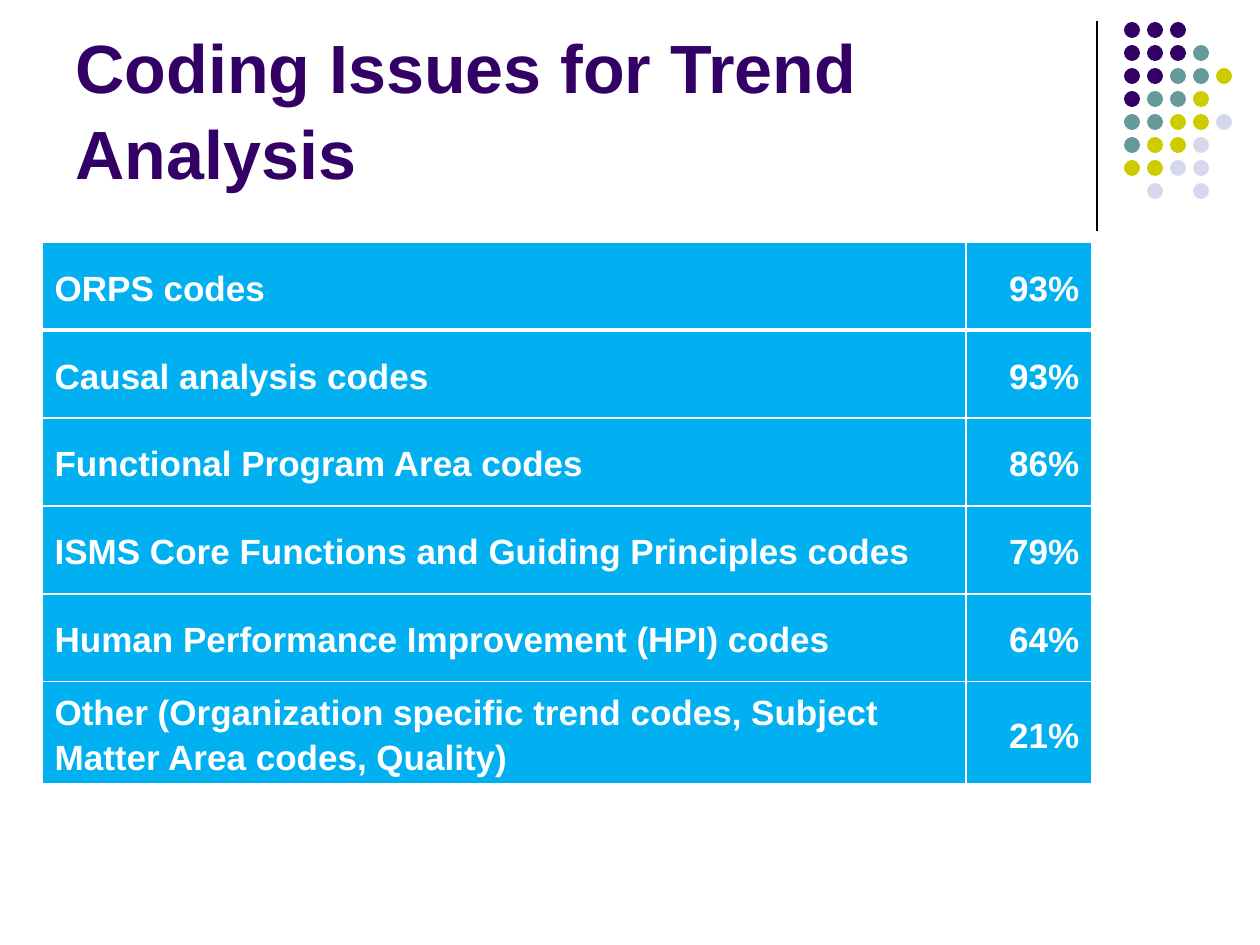
from dataclasses import dataclass

import pptx
import pptx.dml.color
import pptx.enum.shapes
import pptx.enum.text
import pptx.oxml
import pptx.oxml.ns
import pptx.util
from lxml import etree

PX = 914400 // 126
FONT = "Arial"
COLORS = {
    "purple": "330066",
    "teal": "669999",
    "olive": "CCCC00",
    "lavender": "D8D8EC",
    "blue": "00B0F0",
    "white": "FFFFFF",
    "black": "000000",
}
DOT_COLORS = {"P": "purple", "T": "teal", "O": "olive", "L": "lavender"}
DOT_ROWS = ["PPP", "PPPT", "PPTTO", "PTTO", "TTOOL", "TOOL", "OOLL", " L L"]
DOT_LEFT, DOT_TOP, DOT_PITCH, DOT_SIZE = 1124, 22, 23, 16


@dataclass
class CodeUse:
    label: str
    share: str
    height: int = 88


CODE_USES = [
    CodeUse("ORPS codes", "93%"),
    CodeUse("Causal analysis codes", "93%"),
    CodeUse("Functional Program Area codes", "86%"),
    CodeUse("ISMS Core Functions and Guiding Principles codes", "79%"),
    CodeUse("Human Performance Improvement (HPI) codes", "64%"),
    CodeUse("Other (Organization specific trend codes, Subject Matter Area codes, Quality)",
            "21%", 102),
]


def px(n: int) -> pptx.util.Emu:
    return pptx.util.Emu(n * PX)


def rgb(name: str) -> pptx.dml.color.RGBColor:
    return pptx.dml.color.RGBColor.from_string(COLORS[name])


def format_text(p, size: int, color: str, spacing: float) -> None:
    p.line_spacing = spacing
    for r in p.runs:
        r.font.name = FONT
        r.font.size = pptx.util.Pt(size)
        r.font.bold = True
        r.font.color.rgb = rgb(color)


def add_title(s, text: str) -> None:
    sp = s.shapes.title
    sp.left, sp.top, sp.width, sp.height = px(63), px(16), px(1040), px(179)
    tf = sp.text_frame
    tf.text = text
    tf.word_wrap = True
    tf.auto_size = pptx.enum.text.MSO_AUTO_SIZE.NONE
    tf.vertical_anchor = pptx.enum.text.MSO_ANCHOR.BOTTOM
    tf.margin_bottom = px(2)
    p = tf.paragraphs[0]
    p.alignment = pptx.enum.text.PP_ALIGN.LEFT
    format_text(p, 39, "purple", 1.05)


def add_divider(s) -> None:
    line = s.shapes.add_connector(
        pptx.enum.shapes.MSO_CONNECTOR.STRAIGHT, px(1097), px(21), px(1097), px(231))
    line.line.color.rgb = rgb("black")
    line.line.width = pptx.util.Pt(0.75)
    etree.SubElement(line._element.spPr, pptx.oxml.ns.qn("a:effectLst"))


def add_dots(s) -> None:
    for row, codes in enumerate(DOT_ROWS):
        for col, code in enumerate(codes):
            if code == " ":
                continue
            dot = s.shapes.add_shape(
                pptx.enum.shapes.MSO_SHAPE.OVAL,
                px(DOT_LEFT + col * DOT_PITCH), px(DOT_TOP + row * DOT_PITCH),
                px(DOT_SIZE), px(DOT_SIZE))
            dot.shadow.inherit = False
            dot.fill.solid()
            dot.fill.fore_color.rgb = rgb(DOT_COLORS[code])
            dot.line.fill.background()


def set_borders(cell, widths: dict[str, int]) -> None:
    """Draw white borders; widths are points by side, in the order L, R, T, B."""
    tc_pr = cell._tc.get_or_add_tcPr()
    for side, width in widths.items():
        ln = etree.SubElement(tc_pr, pptx.oxml.ns.qn(f"a:ln{side}"), w=str(pptx.util.Pt(width)))
        fill = etree.SubElement(ln, pptx.oxml.ns.qn("a:solidFill"))
        etree.SubElement(fill, pptx.oxml.ns.qn("a:srgbClr"), val=COLORS["white"])


def fill_cell(cell, text: str, align, widths: dict[str, int]) -> None:
    set_borders(cell, widths)
    cell.fill.solid()
    cell.fill.fore_color.rgb = rgb("blue")
    cell.vertical_anchor = pptx.enum.text.MSO_ANCHOR.MIDDLE
    cell.text_frame.text = text
    p = cell.text_frame.paragraphs[0]
    p.alignment = align
    format_text(p, 20, "white", 1.15)


def add_code_table(s, uses: list[CodeUse]) -> None:
    height = sum(use.height for use in uses)
    table = s.shapes.add_table(len(uses), 2, px(42), px(242), px(1050), px(height)).table
    table.columns[0].width, table.columns[1].width = px(924), px(126)
    align = pptx.enum.text.PP_ALIGN
    for i, use in enumerate(uses):
        table.rows[i].height = px(use.height)
        widths = {"L": 1, "R": 1, "T": 3 if i == 1 else 1, "B": 3 if i == 0 else 1}
        fill_cell(table.cell(i, 0), use.label, align.LEFT, widths)
        fill_cell(table.cell(i, 1), use.share, align.RIGHT, widths)


def main() -> None:
    prs = pptx.Presentation()
    prs.slide_width, prs.slide_height = pptx.util.Inches(10), pptx.util.Inches(7.5)
    s = prs.slides.add_slide(prs.slide_layouts[5])
    add_divider(s)
    add_dots(s)
    add_title(s, "Coding Issues for Trend Analysis")
    add_code_table(s, CODE_USES)
    prs.save("out.pptx")


if __name__ == "__main__":
    main()
